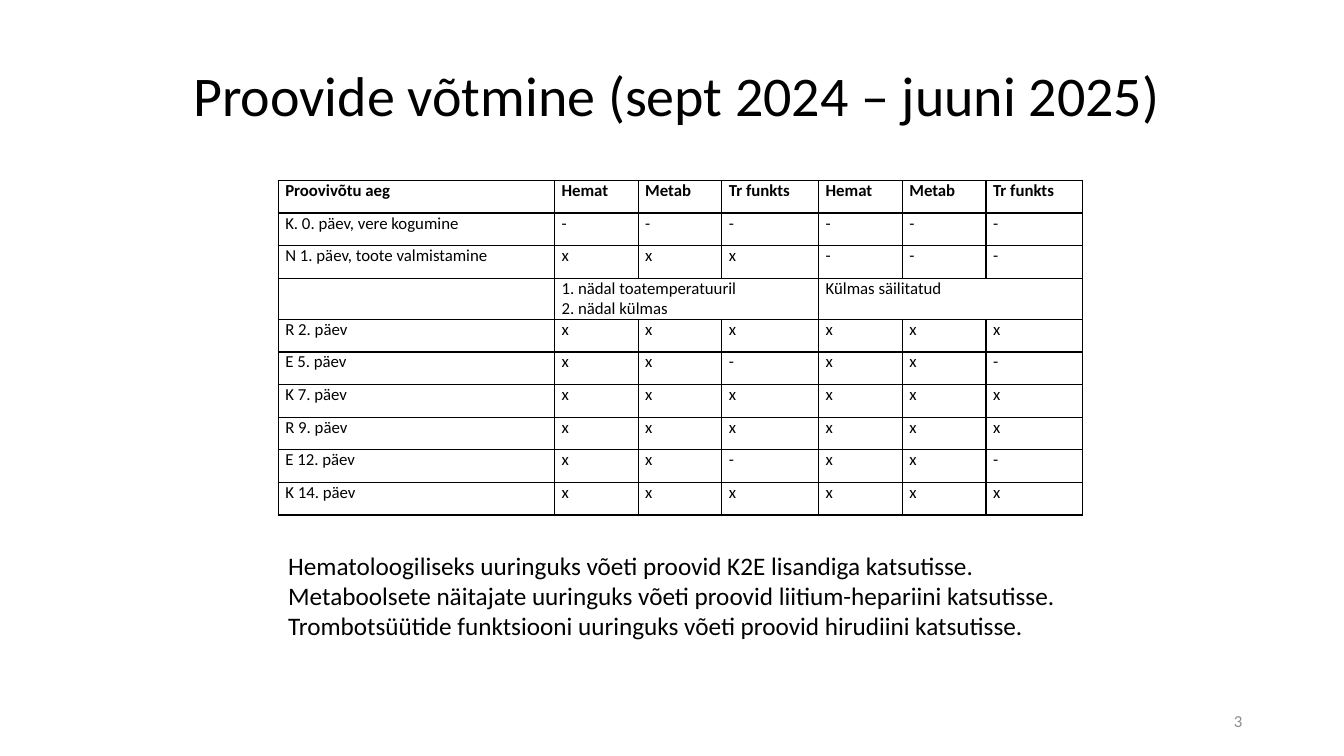
import dataclasses

import lxml.etree
import pptx
import pptx.dml.color
import pptx.enum.text
import pptx.oxml.ns
import pptx.util

Inches = pptx.util.Inches
Align = pptx.enum.text.PP_ALIGN
Anchor = pptx.enum.text.MSO_ANCHOR


@dataclasses.dataclass(frozen=True)
class Theme:
    font: str = "Calibri"
    ink: str = "000000"
    muted: str = "8C8C8C"
    title_size: int = 40
    body_size: int = 18
    small_size: int = 12
    border_width: int = 1


@dataclasses.dataclass(frozen=True)
class Box:
    left: float
    top: float
    width: float
    height: float

    def lengths(self):
        return [Inches(value) for value in dataclasses.astuple(self)]


THEME = Theme()

TITLE = "Proovide võtmine (sept 2024 – juuni 2025)"
TESTS = ["Hemat", "Metab", "Tr funkts"]
COLUMN_WIDTHS = [2.74] + [0.83, 0.83, 0.96] * 2
STORAGE_ROW = 3
SCHEDULE = [
    ["Proovivõtu aeg", *TESTS, *TESTS],
    ["K. 0. päev, vere kogumine", *"------"],
    ["N 1. päev, toote valmistamine", *"xxx---"],
    ["", "1. nädal toatemperatuuril\n2. nädal külmas", "", "", "Külmas säilitatud", "", ""],
    ["R 2. päev", *"xxxxxx"],
    ["E 5. päev", *"xx-xx-"],
    ["K 7. päev", *"xxxxxx"],
    ["R 9. päev", *"xxxxxx"],
    ["E 12. päev", *"xx-xx-"],
    ["K 14. päev", *"xxxxxx"],
]
TUBES = """Hematoloogiliseks uuringuks võeti proovid K2E lisandiga katsutisse.
Metaboolsete näitajate uuringuks võeti proovid liitium-hepariini katsutisse.
Trombotsüütide funktsiooni uuringuks võeti proovid hirudiini katsutisse."""


def write_text(frame, text, size, color=THEME.ink, align=Align.LEFT, bold=False):
    frame.text = text
    for para in frame.paragraphs:
        para.alignment = align
        para.font.name = THEME.font
        para.font.size = pptx.util.Pt(size)
        para.font.bold = bold
        para.font.color.rgb = pptx.dml.color.RGBColor.from_string(color)


def draw_borders(cell):
    properties = cell._tc.get_or_add_tcPr()
    name = pptx.oxml.ns.qn
    for side in ("a:lnL", "a:lnR", "a:lnT", "a:lnB"):
        line = lxml.etree.SubElement(properties, name(side))
        line.set("w", str(pptx.util.Pt(THEME.border_width)))
        fill = lxml.etree.SubElement(line, name("a:solidFill"))
        lxml.etree.SubElement(fill, name("a:srgbClr")).set("val", THEME.ink)


def add_title(page, box):
    title = page.shapes.title
    title.left, title.top, title.width, title.height = box.lengths()
    frame = title.text_frame
    write_text(frame, TITLE, THEME.title_size, align=Align.CENTER)
    frame.auto_size = pptx.enum.text.MSO_AUTO_SIZE.NONE
    frame.vertical_anchor = Anchor.MIDDLE
    frame.paragraphs[0].line_spacing = 0.9


def add_schedule(page, box):
    table = page.shapes.add_table(len(SCHEDULE), len(COLUMN_WIDTHS), *box.lengths()).table
    table.first_row = False
    table.horz_banding = False
    for column, width in zip(table.columns, COLUMN_WIDTHS):
        column.width = Inches(width)
    for row in table.rows:
        row.height = Inches(box.height / len(SCHEDULE))
    for row_index, entries in enumerate(SCHEDULE):
        for column_index, entry in enumerate(entries):
            cell = table.cell(row_index, column_index)
            cell.margin_left = cell.margin_right = Inches(0.07)
            cell.margin_top = cell.margin_bottom = 0
            write_text(cell.text_frame, entry, THEME.small_size, bold=row_index == 0)
            draw_borders(cell)
            cell.fill.background()
    for first in (1, 1 + len(TESTS)):
        last = first + len(TESTS) - 1
        table.cell(STORAGE_ROW, first).merge(table.cell(STORAGE_ROW, last))


def add_text_box(page, box, text, size, anchor=Anchor.TOP, **style):
    frame = page.shapes.add_textbox(*box.lengths()).text_frame
    frame.word_wrap = True
    frame.vertical_anchor = anchor
    write_text(frame, text, size, **style)


def build_sampling_slide(deck):
    page = deck.slides.add_slide(deck.slide_layouts.get_by_name("Title Only"))
    add_title(page, Box(0.96, 0.49, 11.5, 0.98))
    add_schedule(page, Box(2.76, 1.79, 7.98, 3.24))
    add_text_box(page, Box(2.76, 5.41, 7.89, 1), TUBES, THEME.body_size, align=Align.JUSTIFY)
    add_text_box(page, Box(9.42, 6.95, 3, 0.4), "3", THEME.small_size, Anchor.MIDDLE,
                 color=THEME.muted, align=Align.RIGHT)


def main():
    deck = pptx.Presentation()
    deck.slide_width = Inches(13.33)
    deck.slide_height = Inches(7.5)
    build_sampling_slide(deck)
    deck.save("out.pptx")


if __name__ == "__main__":
    main()
